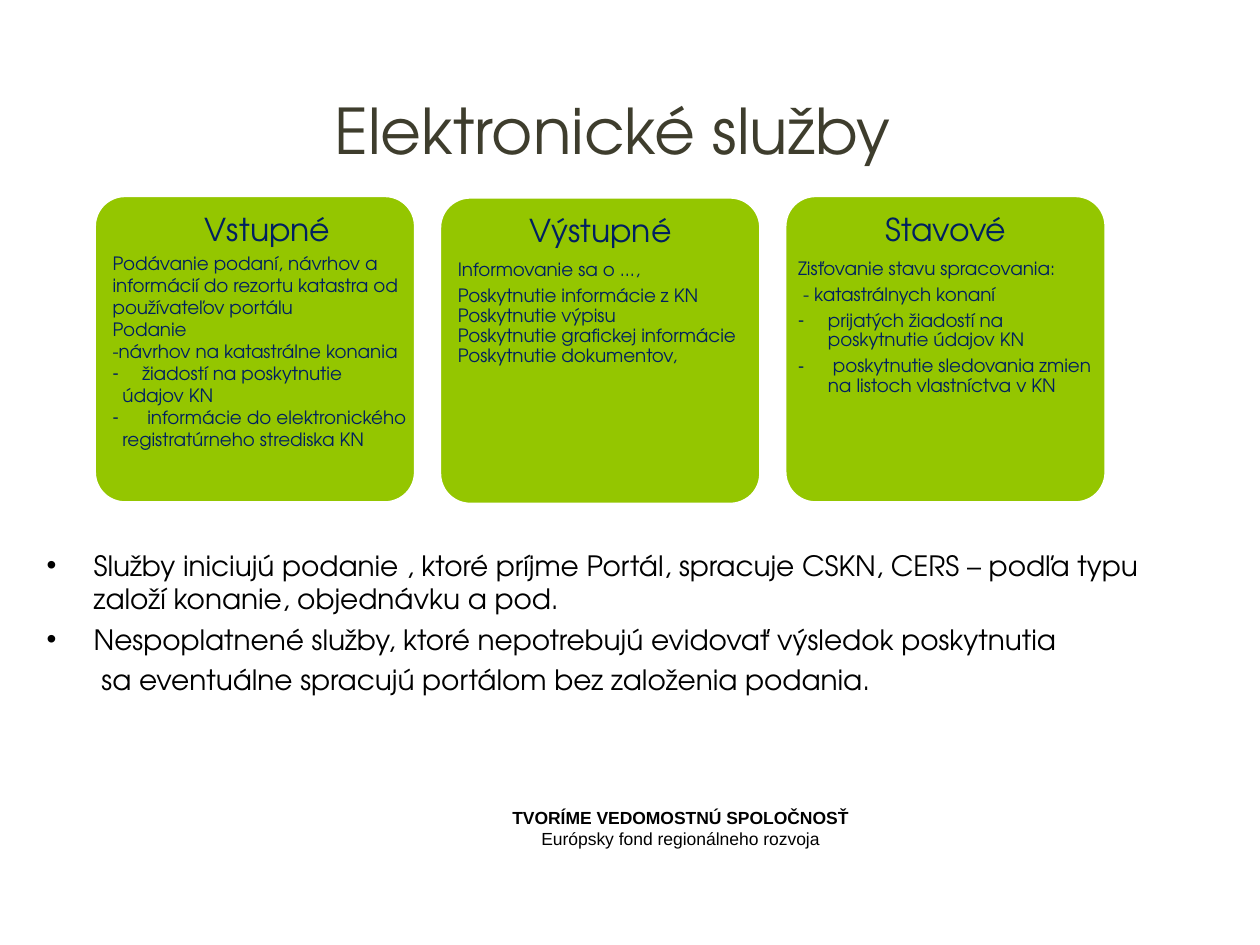
from lxml import etree
from pptx import Presentation
from pptx.dml.color import RGBColor
from pptx.enum.shapes import MSO_SHAPE
from pptx.enum.text import MSO_ANCHOR, PP_ALIGN
from pptx.oxml.ns import qn
from pptx.util import Cm, Pt

ROUNDED = MSO_SHAPE.ROUNDED_RECTANGLE
CENTER = PP_ALIGN.CENTER
LEFT = PP_ALIGN.LEFT
TOP = MSO_ANCHOR.TOP
MIDDLE = MSO_ANCHOR.MIDDLE

COLORS = {
    "card": "94C600",
    "edge": "FFFFFF",
    "navy": "002060",
    "title": "3E3D2D",
    "black": "000000",
}
MAIN_FONT = "TeX Gyre Adventor"
FOOTER_FONT = "Arial"

SPACED = {"spacing": 0.9, "after": 3.5}
TIGHT = {"spacing": 0.9}
HEADING = {"size": 18, "align": CENTER, "spacing": 0.9, "after": 6.3}
DASH = {"bullet": "-", "margin": 0.6, "hanging": 0.6}
CONTINUED = {"margin": 0.2}

CARDS = [
    {
        "shift": 0, "text_width": 6.65, "side_inset": 0.2,
        "lines": [
            ("Vstupné", {**HEADING, "after": 2}),
            ("Podávanie podaní, návrhov a informácií do rezortu katastra od "
             "používateľov portálu", {}),
            ("Podanie", {}),
            ("-návrhov na katastrálne konania", {}),
            ("žiadostí na poskytnutie", DASH),
            ("údajov KN", CONTINUED),
            (" informácie do elektronického", DASH),
            ("registratúrneho strediska KN", CONTINUED),
        ],
    },
    {
        "shift": 0.03, "text_width": 6.15, "side_inset": 0.2,
        "lines": [
            ("Výstupné", HEADING),
            ("Informovanie sa o ...,", SPACED),
            ("Poskytnutie informácie z KN", TIGHT),
            ("Poskytnutie výpisu", TIGHT),
            ("Poskytnutie grafickej informácie", TIGHT),
            ("Poskytnutie dokumentov,", TIGHT),
        ],
    },
    {
        "shift": 0, "text_width": 6.15, "side_inset": 0.1,
        "lines": [
            ("Stavové", HEADING),
            ("Zisťovanie stavu spracovania:", SPACED),
            (" - katastrálnych konaní", SPACED),
            ("prijatých žiadostí na poskytnutie údajov KN", {**SPACED, **DASH}),
            (" poskytnutie sledovania zmien na listoch vlastníctva v KN",
             {**SPACED, **DASH}),
        ],
    },
]

BODY_BULLET = {"bullet": "•", "margin": 0.95, "hanging": 0.95}
BODY = [
    ("Služby iniciujú podanie , ktoré príjme Portál, spracuje CSKN, CERS – "
     "podľa typu založí konanie, objednávku a pod.", BODY_BULLET),
    ("Nespoplatnené služby, ktoré nepotrebujú evidovať výsledok poskytnutia",
     {**BODY_BULLET, "before": 4}),
    (" sa eventuálne spracujú portálom bez založenia podania.",
     {"margin": 0.95, "before": 4}),
]


def write_paragraph(para, text, size=10.5, color="black", font=MAIN_FONT, bold=False,
                    align=LEFT, spacing=None, before=0, after=0,
                    bullet=None, margin=0, hanging=0):
    properties = para._p.get_or_add_pPr()
    properties.set("marL", str(Cm(margin)))
    properties.set("indent", str(-Cm(hanging)))
    if bullet:
        etree.SubElement(properties, qn("a:buFont")).set("typeface", FOOTER_FONT)
        etree.SubElement(properties, qn("a:buChar")).set("char", bullet)
    else:
        etree.SubElement(properties, qn("a:buNone"))
    para.alignment = align
    para.space_before = Pt(before)
    para.space_after = Pt(after)
    if spacing:
        para.line_spacing = spacing
    span = para.add_run()
    span.text = text
    span.font.name = font
    span.font.size = Pt(size)
    span.font.bold = bold
    span.font.color.rgb = RGBColor.from_string(COLORS[color])


def add_text(shapes, left, top, width, height, lines, anchor=TOP,
             insets=(0.25, 0.13), **common):
    box = shapes.add_textbox(Cm(left), Cm(top), Cm(width), Cm(height))
    frame = box.text_frame
    frame.word_wrap = True
    frame.vertical_anchor = anchor
    frame.margin_left = frame.margin_right = Cm(insets[0])
    frame.margin_top = frame.margin_bottom = Cm(insets[1])
    for index, (text, style) in enumerate(lines):
        para = frame.add_paragraph() if index else frame.paragraphs[0]
        write_paragraph(para, text, **{**common, **style})


def add_card(shapes, left, top, width, height, card):
    panel = shapes.add_shape(ROUNDED, Cm(left), Cm(top), Cm(width), Cm(height))
    panel.adjustments[0] = 0.1
    panel.shadow.inherit = False
    panel.fill.solid()
    panel.fill.fore_color.rgb = RGBColor.from_string(COLORS["card"])
    panel.line.color.rgb = RGBColor.from_string(COLORS["edge"])
    panel.line.width = Pt(2)
    add_text(shapes, left + 0.17, top + 0.18, card["text_width"], height - 0.36,
             card["lines"], insets=(card["side_inset"], 0.2), color="navy")


def add_cards(page, left, top, width, height, gap):
    group = page.shapes.add_group_shape()
    card_width = (width - gap * (len(CARDS) - 1)) / len(CARDS)
    for index, card in enumerate(CARDS):
        add_card(group.shapes, left + index * (card_width + gap), top + card["shift"],
                 card_width, height, card)


def add_title(page, left, top, width, height):
    add_text(page.shapes, left, top, width, height, [("Elektronické služby", {})],
             anchor=MIDDLE, size=36, color="title", align=CENTER, spacing=Pt(28))


def add_body(page, left, top, width, height):
    add_text(page.shapes, left, top, width, height, BODY, size=16)


def add_footer(page, left, top, width, height):
    lines = [
        ("TVORÍME VEDOMOSTNÚ SPOLOČNOSŤ", {"bold": True}),
        ("Európsky fond regionálneho rozvoja", {}),
    ]
    add_text(page.shapes, left, top, width, height, lines,
             size=10, font=FOOTER_FONT, align=CENTER)


def main():
    deck = Presentation()
    deck.slide_width = Cm(25.4)
    deck.slide_height = Cm(19.05)
    page = deck.slides.add_slide(deck.slide_layouts[6])
    add_footer(page, 9.09, 16.13, 9.25, 1.8)
    add_body(page, 0.69, 10.92, 22.86, 5.94)
    add_cards(page, 1.9, 3.94, 20.4, 6.2, 0.48)
    add_title(page, 1.5, 1.73, 21.69, 2.31)
    deck.save("out.pptx")


if __name__ == "__main__":
    main()
